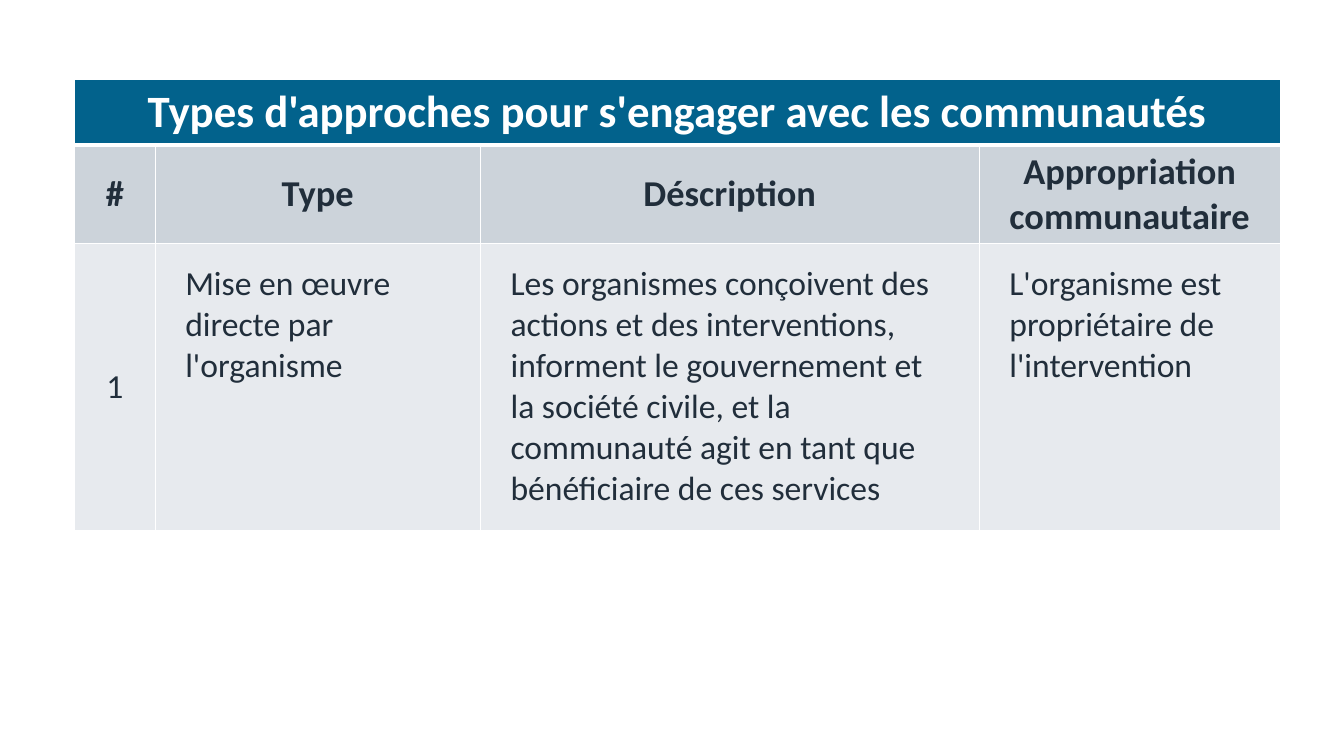
from dataclasses import dataclass

from lxml.etree import SubElement
from pptx import Presentation
from pptx.dml.color import RGBColor
from pptx.enum.text import MSO_ANCHOR as Anchor, PP_ALIGN as Align
from pptx.oxml.ns import qn
from pptx.table import _Cell as Cell
from pptx.util import Cm, Pt

COLORS = {
    "title": "02628C",
    "heading": "CCD3DA",
    "body": "E7EAEE",
    "text": "212E3B",
    "white": "FFFFFF",
}
FONT = "Calibri"
COLUMN_WIDTHS = [2.03, 8.2, 12.57, 7.59]


@dataclass(frozen=True)
class CellStyle:
    fill: str
    color: str
    size: int
    bold: bool = False
    centered: bool = True
    top: float = 1
    bottom: float = 1


@dataclass(frozen=True)
class Row:
    height: float
    texts: list[str]
    styles: list[CellStyle]


TITLE = CellStyle("title", "white", 32, bold=True, bottom=3)
HEADING = CellStyle("heading", "text", 26, bold=True, top=3)
NUMBER = CellStyle("body", "text", 24)
BODY = CellStyle("body", "text", 24, centered=False)

ROWS = [
    Row(1.47, ["Types d'approches pour s'engager avec les communautés", "", "", ""], [TITLE] * 4),
    Row(2.41, ["#", "Type", "Déscription", "Appropriation communautaire"], [HEADING] * 4),
    Row(
        7.19,
        [
            "1",
            "Mise en œuvre directe par l'organisme",
            "Les organismes conçoivent des actions et des interventions, "
            "informent le gouvernement et la société civile, et la communauté "
            "agit en tant que bénéficiaire de ces services",
            "L'organisme est propriétaire de l'intervention",
        ],
        [NUMBER] + [BODY] * 3,
    ),
]


def set_borders(cell: Cell, style: CellStyle) -> None:
    tc_pr = cell._tc.get_or_add_tcPr()
    widths = {"lnL": 1, "lnR": 1, "lnT": style.top, "lnB": style.bottom}
    for tag, width in widths.items():
        line = SubElement(tc_pr, qn(f"a:{tag}"), w=str(Pt(width)))
        fill = SubElement(line, qn("a:solidFill"))
        SubElement(fill, qn("a:srgbClr"), val=COLORS["white"])


def fill_cell(cell: Cell, text: str, style: CellStyle) -> None:
    set_borders(cell, style)
    cell.fill.solid()
    cell.fill.fore_color.rgb = RGBColor.from_string(COLORS[style.fill])
    cell.vertical_anchor = Anchor.MIDDLE if style.centered else Anchor.TOP
    if not style.centered:
        cell.margin_left = cell.margin_right = Cm(0.76)
        cell.margin_top = cell.margin_bottom = Cm(0.51)
    if not text:
        return
    cell.text_frame.text = text
    p = cell.text_frame.paragraphs[0]
    p.alignment = Align.CENTER if style.centered else Align.LEFT
    font = p.runs[0].font
    font.name = FONT
    font.size = Pt(style.size)
    font.bold = style.bold
    font.color.rgb = RGBColor.from_string(COLORS[style.color])


def main() -> None:
    prs = Presentation()
    prs.slide_width, prs.slide_height = Cm(33.87), Cm(19.05)
    s = prs.slides.add_slide(prs.slide_layouts[6])
    width = sum(COLUMN_WIDTHS)
    height = sum(row.height for row in ROWS)
    table = s.shapes.add_table(
        len(ROWS), len(COLUMN_WIDTHS), Cm(1.88), Cm(2.01), Cm(width), Cm(height)
    ).table
    for column, column_width in zip(table.columns, COLUMN_WIDTHS):
        column.width = Cm(column_width)
    for i, row in enumerate(ROWS):
        table.rows[i].height = Cm(row.height)
        for j, (text, style) in enumerate(zip(row.texts, row.styles)):
            fill_cell(table.cell(i, j), text, style)
    table.cell(0, 0).merge(table.cell(0, len(COLUMN_WIDTHS) - 1))
    prs.save("out.pptx")


if __name__ == "__main__":
    main()
